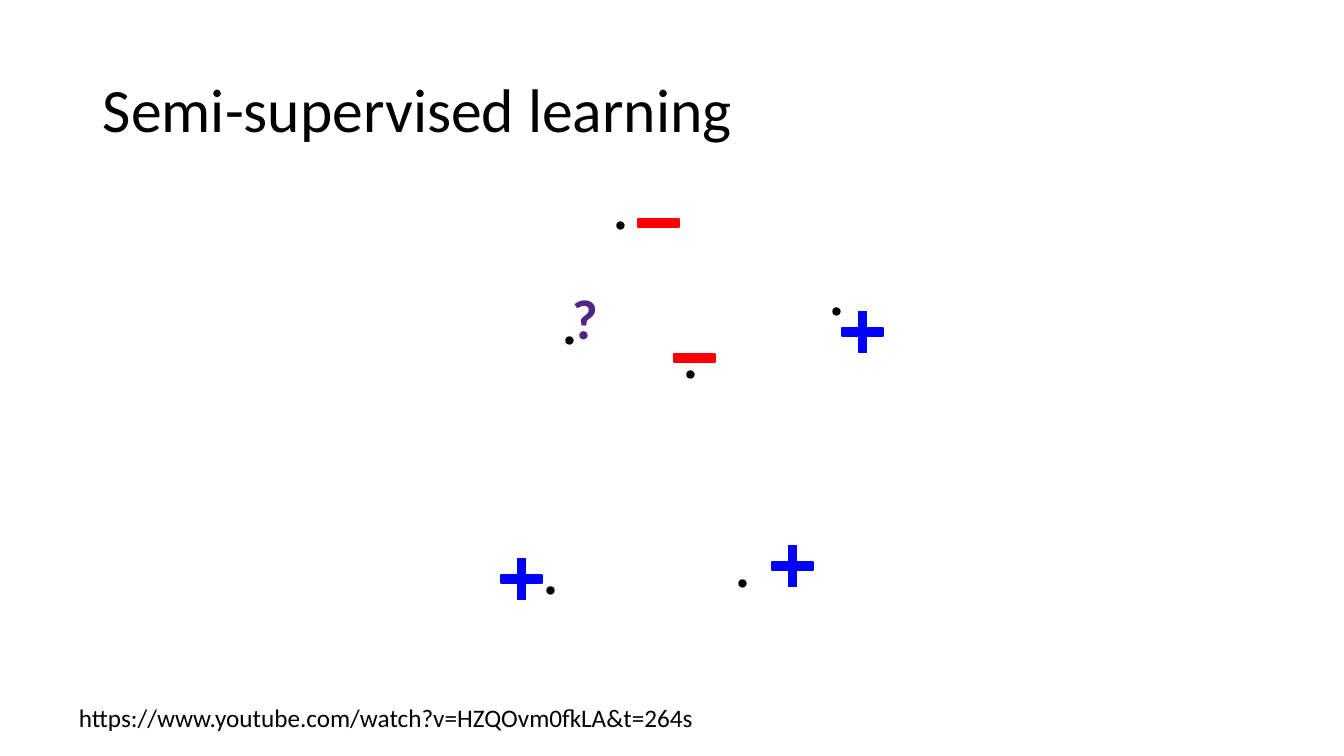
"""Build the semi-supervised learning slide with labelled and unlabelled points."""
import pptx
import pptx.dml.color
import pptx.enum.shapes
import pptx.enum.text
import pptx.util

PX = 914400 / 100.8
COLORS = {"ink": "000000", "negative": "FF0000", "positive": "0000FF", "unknown": "4E2683"}
SHAPE = pptx.enum.shapes.MSO_SHAPE
ANCHOR = pptx.enum.text.MSO_ANCHOR
DOT_SIZE = 7
BAR_WIDTH, BAR_HEIGHT = 41, 8

deck = pptx.Presentation()
deck.slide_width, deck.slide_height = round(1344 * PX), round(756 * PX)
slide = deck.slides.add_slide(deck.slide_layouts[6])


def add_mark(kind, left, top, width, height, color, rotation=0):
    mark = slide.shapes.add_shape(kind, *(round(n * PX) for n in (left, top, width, height)))
    mark.rotation = rotation
    mark.shadow.inherit = False
    rgb = pptx.dml.color.RGBColor.from_string(COLORS[color])
    mark.fill.solid()
    mark.fill.fore_color.rgb = rgb
    mark.line.color.rgb = rgb
    mark.line.width = pptx.util.Pt(1)


def add_label(text, box, size, color, bold=False, wrap=False, anchor=ANCHOR.TOP, spacing=1.0):
    frame = slide.shapes.add_textbox(*(round(n * PX) for n in box)).text_frame
    frame.word_wrap = wrap
    frame.vertical_anchor = anchor
    frame.text = text
    paragraph = frame.paragraphs[0]
    paragraph.line_spacing = spacing
    font = paragraph.runs[0].font
    font.name = "Calibri"
    font.size = pptx.util.Pt(size)
    font.bold = bold
    font.color.rgb = pptx.dml.color.RGBColor.from_string(COLORS[color])


add_label("Semi-supervised learning", (93, 40, 1159, 146), 44, "ink",
          wrap=True, anchor=ANCHOR.MIDDLE, spacing=0.9)
add_label("https://www.youtube.com/watch?v=HZQOvm0fkLA&t=264s", (69, 697, 642, 40), 18, "ink")

for left, top in [(617, 222), (687, 371), (566, 337), (833, 308), (739, 580), (547, 587)]:
    add_mark(SHAPE.OVAL, left, top, DOT_SIZE, DOT_SIZE, "ink")

for left, top in [(638, 219), (674, 354)]:
    add_mark(SHAPE.RECTANGLE, left, top, BAR_WIDTH, BAR_HEIGHT, "negative")

for left, top in [(842, 328), (772, 562), (501, 575)]:
    for rotation in (0, 90):
        add_mark(SHAPE.RECTANGLE, left, top, BAR_WIDTH, BAR_HEIGHT, "positive", rotation)

add_label("?", (562, 279, 46, 78), 40, "unknown", bold=True)

deck.save("out.pptx")
